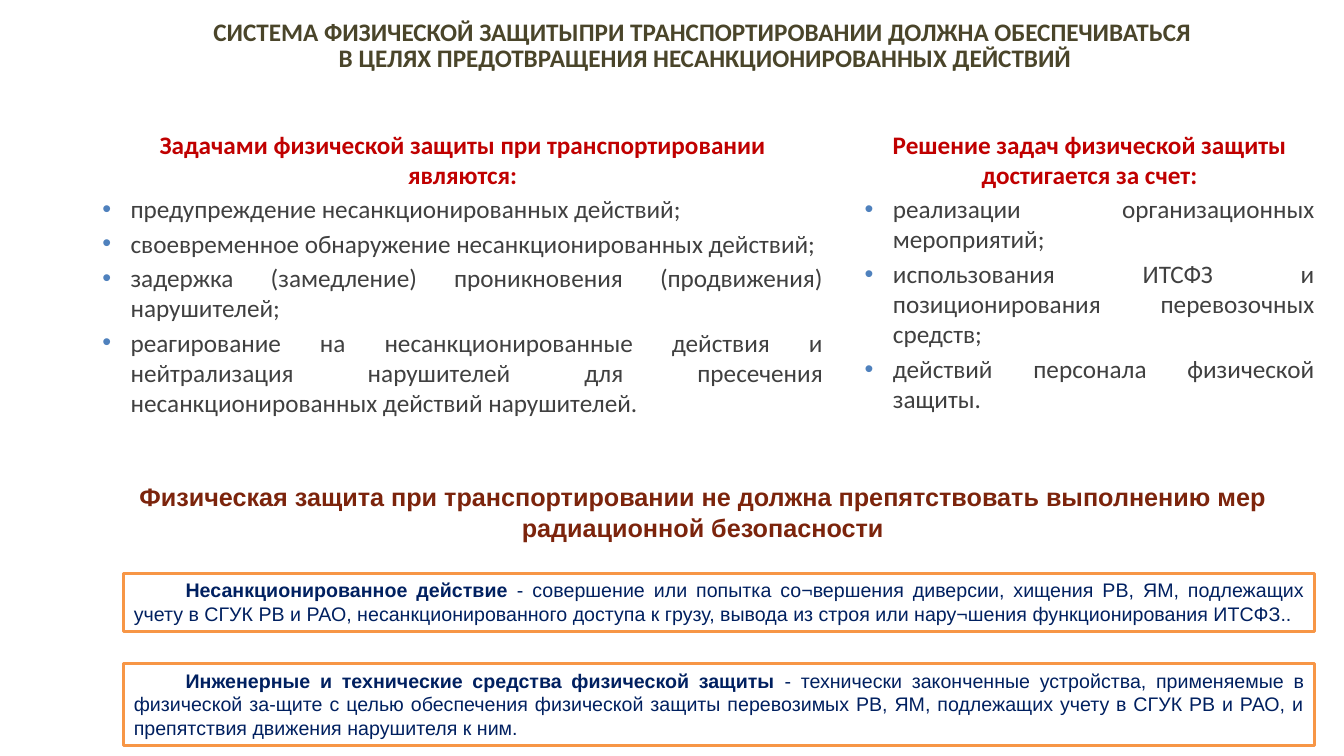
import pptx
import pptx.util
import pptx.dml.color
import pptx.enum.shapes
import pptx.enum.text
import pptx.oxml
import pptx.oxml.ns
from lxml import etree

Pt = pptx.util.Pt
ALIGN = pptx.enum.text.PP_ALIGN

# Content
TITLE = [
    "СИСТЕМА ФИЗИЧЕСКОЙ ЗАЩИТЫПРИ ТРАНСПОРТИРОВАНИИ ДОЛЖНА ОБЕСПЕЧИВАТЬСЯ ",
    "В ЦЕЛЯХ ПРЕДОТВРАЩЕНИЯ НЕСАНКЦИОНИРОВАННЫХ ДЕЙСТВИЙ",
]
COLUMNS = [
    {
        "left": 66, "width": 529, "height": 216,
        "heading": "Задачами физической защиты при транспортировании являются:",
        "items": [
            "предупреждение несанкционированных действий;",
            "своевременное обнаружение несанкционированных действий;",
            "задержка (замедление) проникновения (продвижения) нарушителей;",
            "реагирование на несанкционированные действия и нейтрализация "
            "нарушителей для пресечения несанкционированных действий нарушителей.",
        ],
    },
    {
        "left": 610.5, "width": 335.5, "height": 212.5,
        "heading": "Решение задач физической защиты достигается за счет:",
        "items": [
            "реализации организационных мероприятий;",
            "использования ИТСФЗ и позиционирования перевозочных средств;",
            "действий персонала физической защиты.",
        ],
    },
]
STATEMENT = ("Физическая защита при транспортировании не должна препятствовать "
             "выполнению мер радиационной безопасности")
DEFINITIONS = [
    {
        "top": 409.5, "height": 41.5,
        "term": "Несанкционированное действие ",
        "meaning": "- совершение или попытка со¬вершения диверсии, хищения РВ, ЯМ, "
                   "подлежащих учету в СГУК РВ и РАО, несанкционированного доступа к "
                   "грузу, вывода из строя или нару¬шения функционирования ИТСФЗ..",
    },
    {
        "top": 474, "height": 58.5,
        "term": "Инженерные и технические средства физической защиты ",
        "meaning": "- технически законченные устройства, применяемые в физической "
                   "за-щите с целью обеспечения физической защиты перевозимых РВ, ЯМ, "
                   "подлежащих учету в СГУК РВ и РАО, и препятствия движения "
                   "нарушителя к ним.",
    },
]
COLORS = {
    "title": "4A452A", "heading": "C00000", "body": "404040", "bullet": "4F81BD",
    "statement": "7C240C", "definition": "002060", "border": "F79646", "paper": "FFFFFF",
}
COLUMN_TOP = 88.5
DEFINITION_LEFT, DEFINITION_WIDTH = 88.5, 850.5
BULLET_INDENT, FIRST_LINE_INDENT = 20.25, 37


def rgb(name):
    return pptx.dml.color.RGBColor.from_string(COLORS[name])


def set_font(font, name, size, color, bold=None):
    font.name, font.size, font.bold = name, Pt(size), bold
    font.color.rgb = rgb(color)


def set_indent(paragraph, margin, first_line):
    properties = paragraph._p.get_or_add_pPr()
    properties.set("marL", str(Pt(margin)))
    properties.set("indent", str(Pt(first_line)))
    return properties


def add_bullet(paragraph):
    properties = set_indent(paragraph, BULLET_INDENT, -BULLET_INDENT)
    qn = pptx.oxml.ns.qn
    bullet_color = etree.SubElement(properties, qn("a:buClr"))
    etree.SubElement(bullet_color, qn("a:srgbClr"), val=COLORS["bullet"])
    etree.SubElement(properties, qn("a:buFont"), typeface="Arial")
    etree.SubElement(properties, qn("a:buChar"), char="•")


def prepare_frame(shape):
    frame = shape.text_frame
    frame.word_wrap = True
    frame.auto_size = pptx.enum.text.MSO_AUTO_SIZE.NONE
    frame.vertical_anchor = pptx.enum.text.MSO_ANCHOR.TOP
    return frame


def add_text_box(slide, left, top, width, height):
    return prepare_frame(slide.shapes.add_textbox(Pt(left), Pt(top), Pt(width), Pt(height)))


def add_title(slide):
    title = slide.shapes.title
    title.left, title.top, title.width, title.height = Pt(78.5), Pt(11.5), Pt(850.5), Pt(49)
    frame = prepare_frame(title)
    frame.text = "\n".join(TITLE)
    for paragraph in frame.paragraphs:
        paragraph.alignment = ALIGN.CENTER
        paragraph.line_spacing = 0.85
        set_font(paragraph.font, "Calibri", 18, "title", True)


def add_column(slide, column):
    frame = add_text_box(slide, column["left"], COLUMN_TOP, column["width"], column["height"])
    heading = frame.paragraphs[0]
    heading.text = column["heading"]
    heading.alignment = ALIGN.CENTER
    set_font(heading.font, "Calibri", 18, "heading", True)
    for item in column["items"]:
        paragraph = frame.add_paragraph()
        paragraph.text = item
        paragraph.alignment = ALIGN.JUSTIFY
        paragraph.space_before = Pt(3)
        add_bullet(paragraph)
        set_font(paragraph.font, "Calibri", 18, "body")


def add_statement(slide):
    paragraph = add_text_box(slide, 80, 340.5, 844, 51).paragraphs[0]
    paragraph.text = STATEMENT
    paragraph.alignment = ALIGN.CENTER
    set_font(paragraph.font, "Arial", 18, "statement", True)


def add_definition(slide, definition):
    shape = slide.shapes.add_shape(
        pptx.enum.shapes.MSO_SHAPE.RECTANGLE, Pt(DEFINITION_LEFT), Pt(definition["top"]),
        Pt(DEFINITION_WIDTH), Pt(definition["height"]))
    shape.shadow.inherit = False
    shape.fill.solid()
    shape.fill.fore_color.rgb = rgb("paper")
    shape.line.color.rgb = rgb("border")
    shape.line.width = Pt(2)
    paragraph = prepare_frame(shape).paragraphs[0]
    paragraph.alignment = ALIGN.JUSTIFY
    set_indent(paragraph, 0, FIRST_LINE_INDENT)
    for part, bold in (("term", True), ("meaning", False)):
        run = paragraph.add_run()
        run.text = definition[part]
        set_font(run.font, "Arial", 14, "definition", bold)


def main():
    presentation = pptx.Presentation()
    presentation.slide_width, presentation.slide_height = Pt(960), Pt(540)
    slide = presentation.slides.add_slide(presentation.slide_layouts.get_by_name("Title Only"))
    add_title(slide)
    # Tasks and the means of solving them
    for column in COLUMNS:
        add_column(slide, column)
    add_statement(slide)
    # Framed definitions
    for definition in DEFINITIONS:
        add_definition(slide, definition)
    presentation.save("out.pptx")


if __name__ == "__main__":
    main()
